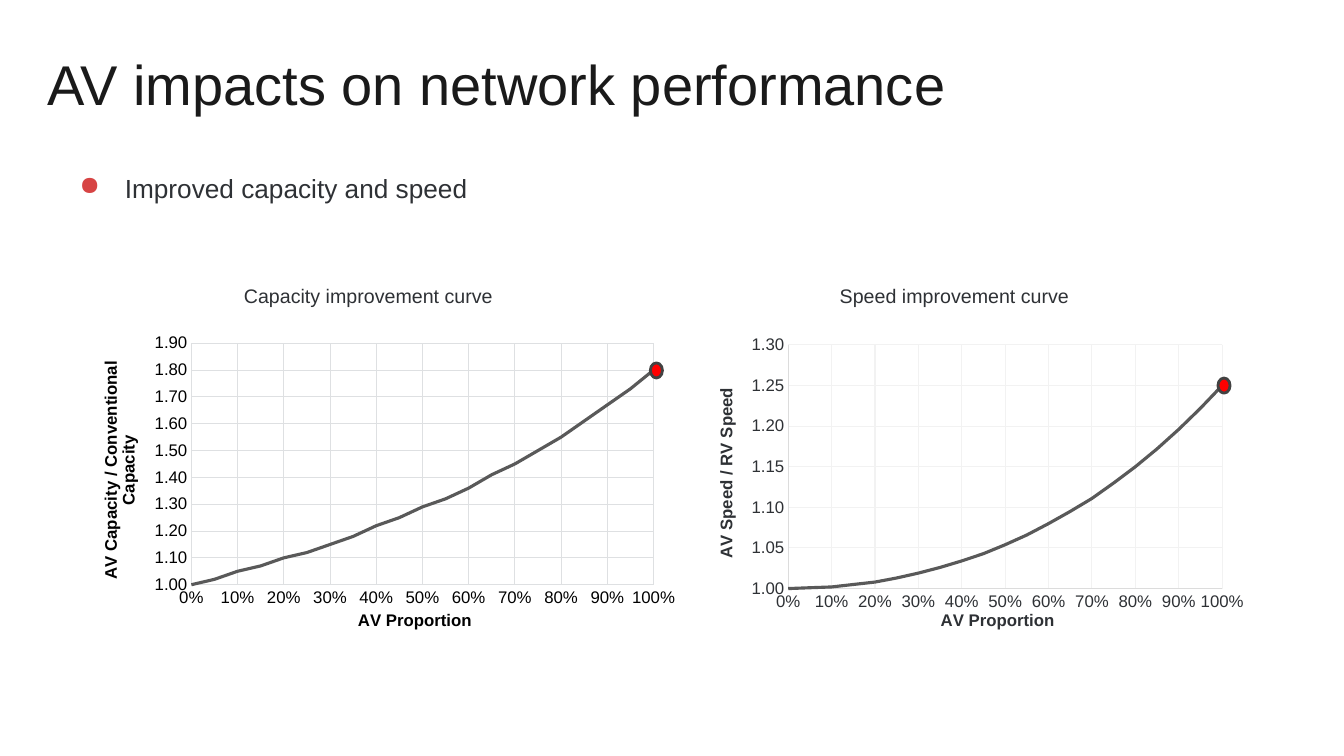
"""Build the slide on how automated vehicles change network capacity and speed."""
from dataclasses import dataclass

from lxml import etree
from pptx import Presentation
from pptx import util as u
from pptx.chart.data import XyChartData
from pptx.dml.color import RGBColor
from pptx.enum import chart as charts, shapes, text
from pptx.oxml import ns

Inches, Pt = u.Inches, u.Pt


@dataclass(frozen=True)
class Theme:
    font: str = "Arial"
    heading: str = "1A1A1A"
    body: str = "2E3135"
    black: str = "000000"
    accent: str = "D74444"
    curve: str = "595959"
    endpoint: str = "FF0000"
    outline: str = "424242"
    axis: str = "DCDCDC"
    dark_grid: str = "DEE0E2"
    light_grid: str = "F2F2F2"
    title_size: float = 40
    body_size: float = 18.7
    caption_size: float = 14
    chart_size: float = 12


THEME = Theme()
CAPACITY = [1, 1.02, 1.05, 1.07, 1.1, 1.12, 1.15, 1.18, 1.22, 1.25, 1.29,
            1.32, 1.36, 1.41, 1.45, 1.5, 1.55, 1.61, 1.67, 1.73, 1.8]
SPEED = [1, 1.001, 1.002, 1.005, 1.008, 1.013, 1.019, 1.026, 1.034, 1.043, 1.054,
         1.066, 1.08, 1.095, 1.111, 1.13, 1.15, 1.172, 1.196, 1.222, 1.25]


def rgb(color):
    return RGBColor.from_string(color)


def style_font(font, size, color, bold=False):
    font.name, font.size, font.bold = THEME.font, Pt(size), bold
    font.color.rgb = rgb(color)


def style_line(line, color, width):
    line.color.rgb, line.width = rgb(color), Pt(width)


def add_text(slide, box, wording, size, color, margins=(0.1, 0.05, 0.1, 0.05),
             anchor=text.MSO_ANCHOR.TOP, spacing=1.0, left=0, indent=0, bullet=None):
    frame = slide.shapes.add_textbox(*map(Inches, box)).text_frame
    frame.word_wrap, frame.vertical_anchor = True, anchor
    (frame.margin_left, frame.margin_top,
     frame.margin_right, frame.margin_bottom) = map(Inches, margins)
    paragraph = frame.paragraphs[0]
    paragraph.text, paragraph.line_spacing = wording, spacing
    properties = paragraph._p.get_or_add_pPr()
    properties.set("marL", str(Inches(left)))
    properties.set("indent", str(Inches(indent)))
    if bullet:
        bullet_color = etree.SubElement(properties, ns.qn("a:buClr"))
        etree.SubElement(bullet_color, ns.qn("a:srgbClr"), val=THEME.accent)
        etree.SubElement(properties, ns.qn("a:buChar"), char=bullet)
    style_font(paragraph.font, size, color)


def style_axis(axis, title, limits, step, number_format, color, grid, line):
    axis.minimum_scale, axis.maximum_scale = limits
    axis.major_unit = step
    axis.major_tick_mark = axis.minor_tick_mark = charts.XL_TICK_MARK.NONE
    axis.has_major_gridlines = True
    style_line(axis.major_gridlines.format.line, grid, 0.75)
    if line:
        style_line(axis.format.line, line, 0.75)
    else:
        axis.format.line.fill.background()
    labels = axis.tick_labels
    labels.number_format, labels.number_format_is_linked = number_format, False
    style_font(labels.font, THEME.chart_size, color)
    axis.axis_title.text_frame.text = title
    style_font(axis.axis_title.text_frame.paragraphs[0].font,
               THEME.chart_size, color, bold=True)


def place_plot(chart, plot_box):
    plot_area = chart._chartSpace.chart.plotArea
    for old_layout in plot_area.findall(ns.qn("c:layout")):
        plot_area.remove(old_layout)
    layout = etree.Element(ns.qn("c:layout"))
    manual = etree.SubElement(layout, ns.qn("c:manualLayout"))
    settings = [("layoutTarget", "inner"), ("xMode", "edge"), ("yMode", "edge")]
    settings += zip("xywh", map(str, plot_box))
    for tag, setting in settings:
        etree.SubElement(manual, ns.qn(f"c:{tag}"), val=setting)
    plot_area.insert(0, layout)


def add_curve(slide, box, plot_box, ratios, ratio_title, top, step, color, grid, line=None):
    data = XyChartData()
    points = data.add_series("Series 1")
    for index, ratio in enumerate(ratios):
        points.add_data_point(index * 5 / 100, ratio)
    chart = slide.shapes.add_chart(
        charts.XL_CHART_TYPE.XY_SCATTER_LINES_NO_MARKERS, *map(Inches, box), data).chart
    chart.has_legend = chart.has_title = False
    style_font(chart.font, THEME.chart_size, color)
    chart.plots[0].vary_by_categories = False
    curve = chart.plots[0].series[0]
    curve.smooth = False
    style_line(curve.format.line, THEME.curve, 2.25)
    style_axis(chart.category_axis, "AV Proportion", (0, 1), 0.1, "0%", color, grid, line)
    style_axis(chart.value_axis, ratio_title, (1, top), step, "0.00", color, grid, line)
    place_plot(chart, plot_box)


def add_endpoint(slide, left, top):
    dot = slide.shapes.add_shape(shapes.MSO_SHAPE.OVAL, Inches(left), Inches(top),
                                 Inches(0.12), Inches(0.15))
    dot.shadow.inherit = False
    dot.fill.solid()
    dot.fill.fore_color.rgb = rgb(THEME.endpoint)
    style_line(dot.line, THEME.outline, 2)


def main():
    deck = Presentation()
    deck.slide_width, deck.slide_height = Inches(13.33), Inches(7.5)
    slide = deck.slides.add_slide(deck.slide_layouts[6])

    add_text(slide, (0.47, 0.39, 12.36, 0.77), "AV impacts on network performance",
             THEME.title_size, THEME.heading, margins=(0, 0.1, 0, 0),
             anchor=text.MSO_ANCHOR.BOTTOM)
    add_text(slide, (0.47, 1.56, 12.36, 4.83), "Improved capacity and speed",
             THEME.body_size, THEME.body, margins=(0.1,) * 4, spacing=1.15,
             left=0.67, indent=-0.45, bullet="●")

    add_curve(slide, (0.94, 3.13, 5.84, 3.17), (0.164, 0.087, 0.785, 0.756), CAPACITY,
              "AV Capacity / Conventional Capacity", 1.9, 0.1, THEME.black, THEME.dark_grid)
    add_curve(slide, (6.97, 3.13, 5.47, 3.17), (0.155, 0.092, 0.787, 0.763), SPEED,
              "AV Speed / RV Speed", 1.3, 0.05, THEME.body, THEME.light_grid, THEME.axis)

    for left, caption in ((2.17, "Capacity improvement curve"),
                          (8.08, "Speed improvement curve")):
        add_text(slide, (left, 2.73, 3.71, 0.35), caption, THEME.caption_size,
                 THEME.body, spacing=1.15, left=0.15)
    for left, top in ((6.45, 3.6), (12.08, 3.75)):
        add_endpoint(slide, left, top)

    deck.save("out.pptx")


if __name__ == "__main__":
    main()
